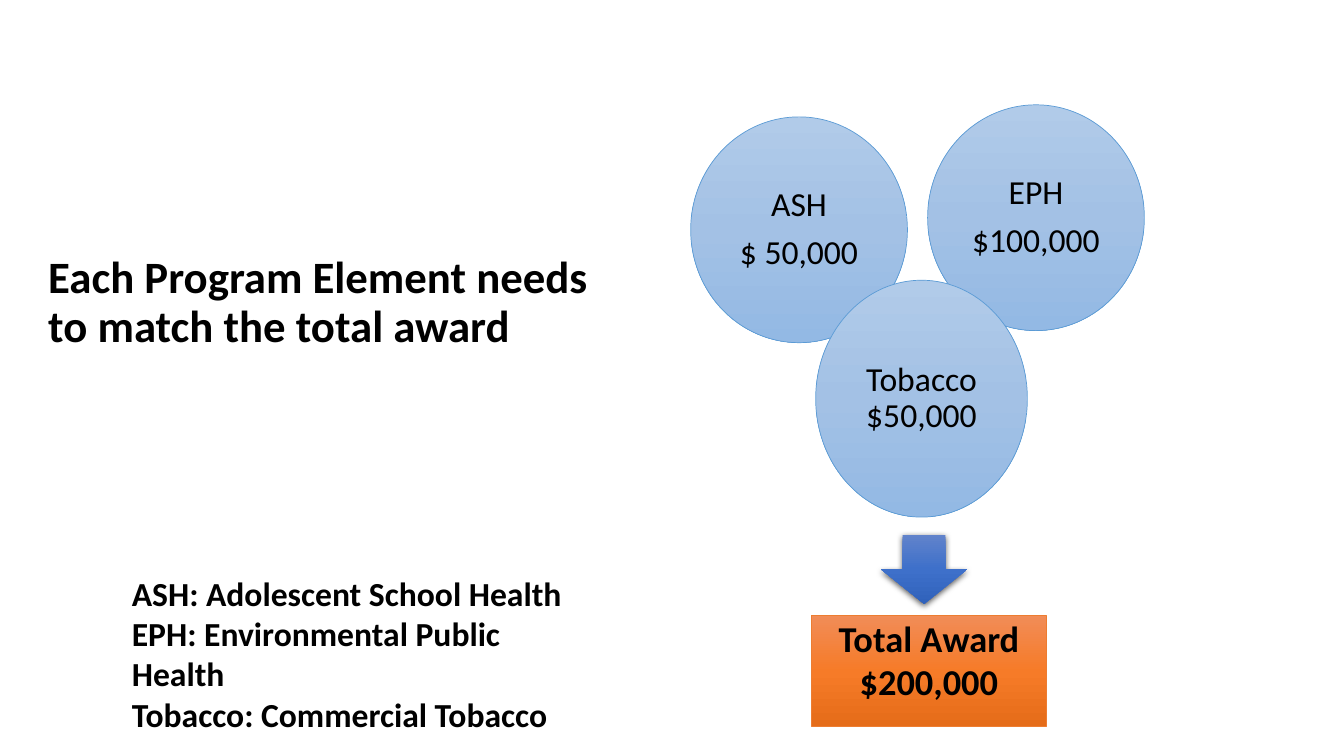
from copy import deepcopy

from lxml import etree
from pptx import Presentation
from pptx.dml.color import RGBColor
from pptx.enum.shapes import MSO_SHAPE as SHAPE
from pptx.enum.text import MSO_ANCHOR as ANCHOR, PP_ALIGN as ALIGN
from pptx.oxml.ns import qn
from pptx.util import Inches, Pt

COLORS = {"text": "000000", "circle_line": "5B9BD5", "award_line": "ED7D31"}
GRADIENTS = {
    "circle": ["B1CBE9", "A3C1E5", "93B9E4"],
    "arrow": ["6183CB", "3E70CA", "3062BB"],
    "award": ["F18C57", "F67B28", "E56C19"],
}
TITLE = ["Each Program Element needs to match the total award"]
LEGEND = [
    "ASH: Adolescent School Health",
    "EPH: Environmental Public Health",
    "Tobacco: Commercial Tobacco",
]
# lines, (left, top, width, height)
ELEMENTS = [
    (["ASH", "$ 50,000"], (6.85, 1.16, 2.15, 2.24)),
    (["EPH", "$100,000"], (9.2, 1.04, 2.15, 2.24)),
    (["Tobacco $50,000"], (8.09, 2.78, 2.1, 2.35)),
]
AWARD = ["Total Award", "$200,000"]

prs = Presentation()
prs.slide_width, prs.slide_height = Inches(13.33), Inches(7.5)
slide = prs.slides.add_slide(prs.slide_layouts[6])


def write(sp, lines, size=24, bold=False, align=ALIGN.LEFT, anchor=ANCHOR.TOP,
          spacing=1.0, after=0, inset=(0.1, 0.05)):
    tf = sp.text_frame
    tf.word_wrap = True
    tf.vertical_anchor = anchor
    tf.margin_left = tf.margin_right = Inches(inset[0])
    tf.margin_top = tf.margin_bottom = Inches(inset[1])
    for i, line in enumerate(lines):
        p = tf.paragraphs[0] if i == 0 else tf.add_paragraph()
        p.alignment, p.line_spacing, p.space_after = align, spacing, Pt(after)
        r = p.add_run()
        r.text = line
        r.font.name, r.font.size, r.font.bold = "Calibri", Pt(size), bold
        r.font.color.rgb = RGBColor.from_string(COLORS["text"])


def add_text(box, lines, **fmt):
    write(slide.shapes.add_textbox(*map(Inches, box)), lines, **fmt)


def add_gradient_shape(kind, box, gradient, line=None):
    """Add a shape with three evenly spaced stops running downwards."""
    sp = slide.shapes.add_shape(kind, *map(Inches, box))
    sp.shadow.inherit = False
    sp.fill.gradient()
    sp.fill.gradient_angle = 270
    stops = sp._element.spPr.find(".//" + qn("a:gsLst"))
    stops.insert(1, deepcopy(stops[0]))
    for i, (stop, color) in enumerate(zip(sp.fill.gradient_stops, GRADIENTS[gradient])):
        stop.position = i / 2
        stop.color.rgb = RGBColor.from_string(color)
    if line:
        sp.line.color.rgb = RGBColor.from_string(COLORS[line])
        sp.line.width = Pt(0.5)
    else:
        sp.line.fill.background()
    return sp


def add_drop_shadow(sp):
    effects = sp._element.spPr.find(qn("a:effectLst"))
    shadow = etree.SubElement(effects, qn("a:outerShdw"), blurRad=str(Pt(4.5)),
                              dist=str(Pt(1.5)), dir="5400000", rotWithShape="0")
    color = etree.SubElement(shadow, qn("a:srgbClr"), val=COLORS["text"])
    etree.SubElement(color, qn("a:alpha"), val="63000")


add_text((0.38, 1.28, 5.94, 2.26), TITLE, size=32, bold=True,
         anchor=ANCHOR.BOTTOM, spacing=0.9)

arrow = add_gradient_shape(SHAPE.DOWN_ARROW, (8.74, 5.31, 0.85, 0.68), "arrow")
add_drop_shadow(arrow)

for lines, box in ELEMENTS:
    circle = add_gradient_shape(SHAPE.OVAL, box, "circle", "circle_line")
    write(circle, lines, align=ALIGN.CENTER, anchor=ANCHOR.MIDDLE,
          spacing=0.9, after=8.4, inset=(0, 0))

award = add_gradient_shape(SHAPE.RECTANGLE, (8.05, 6.11, 2.33, 1.1), "award", "award_line")
write(award, AWARD, size=26, bold=True, align=ALIGN.CENTER, inset=(0.1, 0))

add_text((1.21, 5.63, 4.83, 1.31), LEGEND, bold=True)

prs.save("out.pptx")
